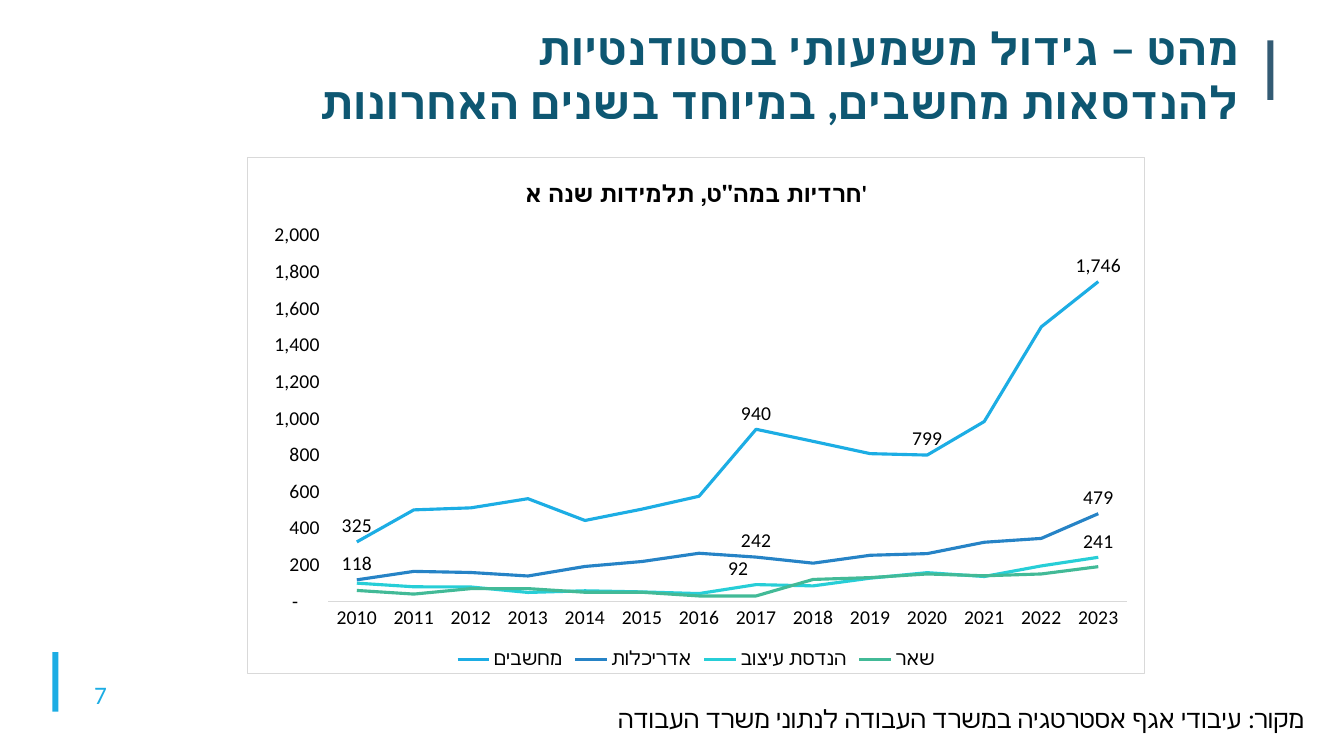
import pptx
import pptx.chart.data
import pptx.dml.color
import pptx.enum.chart
import pptx.enum.shapes
import pptx.enum.text
import pptx.oxml
import pptx.oxml.ns
import pptx.util
from lxml import etree

Inches = pptx.util.Inches
Pt = pptx.util.Pt
qn = pptx.oxml.ns.qn
nsdecls = pptx.oxml.ns.nsdecls

YEARS = [str(year) for year in range(2010, 2024)]
SERIES = [
    ("מחשבים", "1CADE4", [0, 7, 10, 13],
     [325, 500, 511, 561, 442, 504, 574, 940, 874, 807, 799, 982, 1499, 1746]),
    ("אדריכלות", "2683C6", [0, 7, 13],
     [118, 164, 158, 139, 191, 218, 263, 242, 209, 252, 261, 323, 344, 479]),
    ("הנדסת עיצוב", "27CED7", [7, 13],
     [100, 80, 79, 49, 58, 52, 43, 92, 85, 127, 157, 136, 194, 241]),
    ("שאר", "42BA97", [],
     [60, 40, 70, 70, 50, 50, 30, 30, 120, 130, 150, 140, 150, 190]),
]


def color(value):
    return pptx.dml.color.RGBColor.from_string(value)


def apply(target, formats):
    for name, value in formats.items():
        setattr(target, name, value)


def manual_layout(**fractions):
    values = "".join(f'<c:{name} val="{value}"/>' for name, value in fractions.items())
    return pptx.oxml.parse_xml(
        f'<c:layout {nsdecls("c")}><c:manualLayout>{values}</c:manualLayout></c:layout>')


class SlideBuilder:
    heading_font = "Lato"
    body_font = "Calibri"
    black = "000000"
    border = "D9D9D9"

    def __init__(self, presentation):
        self.slide = presentation.slides.add_slide(presentation.slide_layouts[5])

    def bar(self, left, top, fill):
        shape = self.slide.shapes.add_shape(
            pptx.enum.shapes.MSO_SHAPE.RECTANGLE,
            Inches(left), Inches(top), Inches(0.06), Inches(0.59))
        shape.shadow.inherit = False
        shape.fill.solid()
        shape.fill.fore_color.rgb = color(fill)
        shape.line.fill.background()

    def fill_text(self, shape, text, size, font, fill, bold=False):
        apply(shape.text_frame, {
            "word_wrap": True,
            "vertical_anchor": pptx.enum.text.MSO_ANCHOR.TOP,
            "auto_size": pptx.enum.text.MSO_AUTO_SIZE.NONE,
        })
        paragraph = shape.text_frame.paragraphs[0]
        apply(paragraph, {
            "alignment": pptx.enum.text.PP_ALIGN.RIGHT,
            "line_spacing": 1.0,
            "space_before": Pt(0),
        })
        paragraph._p.get_or_add_pPr().set("rtl", "1")
        run = paragraph.add_run()
        run.text = text
        apply(run.font, {"size": Pt(size), "name": font, "bold": bold})
        run.font.color.rgb = color(fill)
        etree.SubElement(run._r.get_or_add_rPr(), qn("a:cs")).set("typeface", font)

    def title(self, left, top, width, height, text):
        shape = self.slide.shapes.title
        apply(shape, {"left": Inches(left), "top": Inches(top),
                      "width": Inches(width), "height": Inches(height)})
        self.fill_text(shape, text, 32, self.heading_font, "0E5772", True)

    def text(self, left, top, width, height, text, font, fill):
        shape = self.slide.shapes.add_textbox(
            Inches(left), Inches(top), Inches(width), Inches(height))
        self.fill_text(shape, text, 18, font, fill)

    def line_chart(self, left, top, width, height, heading):
        data = pptx.chart.data.CategoryChartData(number_format="#,##0")
        data.categories = YEARS
        for name, _, _, values in SERIES:
            data.add_series(name, values)
        chart = self.slide.shapes.add_chart(
            pptx.enum.chart.XL_CHART_TYPE.LINE,
            Inches(left), Inches(top), Inches(width), Inches(height), data).chart
        apply(chart.font, {"size": Pt(14), "name": self.body_font})
        chart.font.color.rgb = color(self.black)

        chart.has_title = True
        chart.chart_title.include_in_layout = False
        run = chart.chart_title.text_frame.paragraphs[0].add_run()
        run.text = heading
        apply(run.font, {"size": Pt(16.8), "bold": True, "name": self.body_font})
        run.font.color.rgb = color(self.black)

        chart.has_legend = True
        apply(chart.legend, {
            "position": pptx.enum.chart.XL_LEGEND_POSITION.BOTTOM,
            "include_in_layout": False,
        })
        self.format_axes(chart)
        self.format_series(chart)
        self.frame_chart(chart)

    def format_axes(self, chart):
        no_tick = pptx.enum.chart.XL_TICK_MARK.NONE
        plain = {"has_major_gridlines": False,
                 "major_tick_mark": no_tick, "minor_tick_mark": no_tick}
        apply(chart.category_axis, plain)
        chart.category_axis.format.line.width = Pt(0.75)
        chart.category_axis.format.line.color.rgb = color(self.border)
        apply(chart.value_axis, {**plain, "minimum_scale": 0,
                                 "maximum_scale": 2000, "major_unit": 200})
        chart.value_axis.format.line.fill.background()
        apply(chart.value_axis.tick_labels, {
            "number_format": '_(* #,##0_);_(* \\(#,##0\\);_(* "-"??_);_(@_)',
            "number_format_is_linked": False,
        })

    def format_series(self, chart):
        plot = chart.plots[0]
        plot.vary_by_categories = False
        for series, (name, fill, labelled, _) in zip(plot.series, SERIES):
            series.smooth = False
            series.format.line.width = Pt(2.25)
            series.format.line.color.rgb = color(fill)
            for index in labelled:
                series.points[index].data_label.position = \
                    pptx.enum.chart.XL_LABEL_POSITION.ABOVE
            if labelled:
                series.data_labels.show_value = False
            if name == "הנדסת עיצוב":
                label = series._element.xpath("c:dLbls/c:dLbl")[0]
                label.insert(1, manual_layout(x=-0.02, y=0))

    def frame_chart(self, chart):
        chart_space = chart._chartSpace
        plot_area = chart_space.xpath("c:chart/c:plotArea")[0]
        for layout in plot_area.xpath("c:layout"):
            plot_area.remove(layout)
        plot_area.insert(0, manual_layout(
            layoutTarget="inner", xMode="edge", yMode="edge",
            x=0.09, y=0.15, w=0.89, h=0.71))
        chart_space.xpath("c:chart")[0].addnext(pptx.oxml.parse_xml(
            f'<c:spPr {nsdecls("c", "a")}>'
            '<a:solidFill><a:srgbClr val="FFFFFF"/></a:solidFill>'
            f'<a:ln w="{Pt(0.75)}"><a:solidFill><a:srgbClr val="{self.border}"/>'
            '</a:solidFill></a:ln></c:spPr>'))


def main():
    presentation = pptx.Presentation()
    apply(presentation, {"slide_width": Inches(13.33), "slide_height": Inches(7.5)})
    builder = SlideBuilder(presentation)
    builder.bar(0.52, 6.47, "1CADE4")
    builder.bar(12.57, 0.4, "335B74")
    builder.title(2.99, 0.16, 9.4, 1.18,
                  "מהט – גידול משמעותי בסטודנטיות להנדסאות מחשבים, במיוחד בשנים האחרונות")
    builder.text(-1.84, 6.69, 3, 0.4, "7", builder.body_font, "1CADE4")
    builder.text(4.22, 6.93, 8.82, 0.4,
                 "מקור: עיבודי אגף אסטרטגיה במשרד העבודה לנתוני משרד העבודה",
                 builder.heading_font, builder.black)
    builder.line_chart(2.45, 1.56, 8.91, 5.13, "חרדיות במה\"ט, תלמידות שנה א'")
    presentation.save("out.pptx")


if __name__ == "__main__":
    main()
